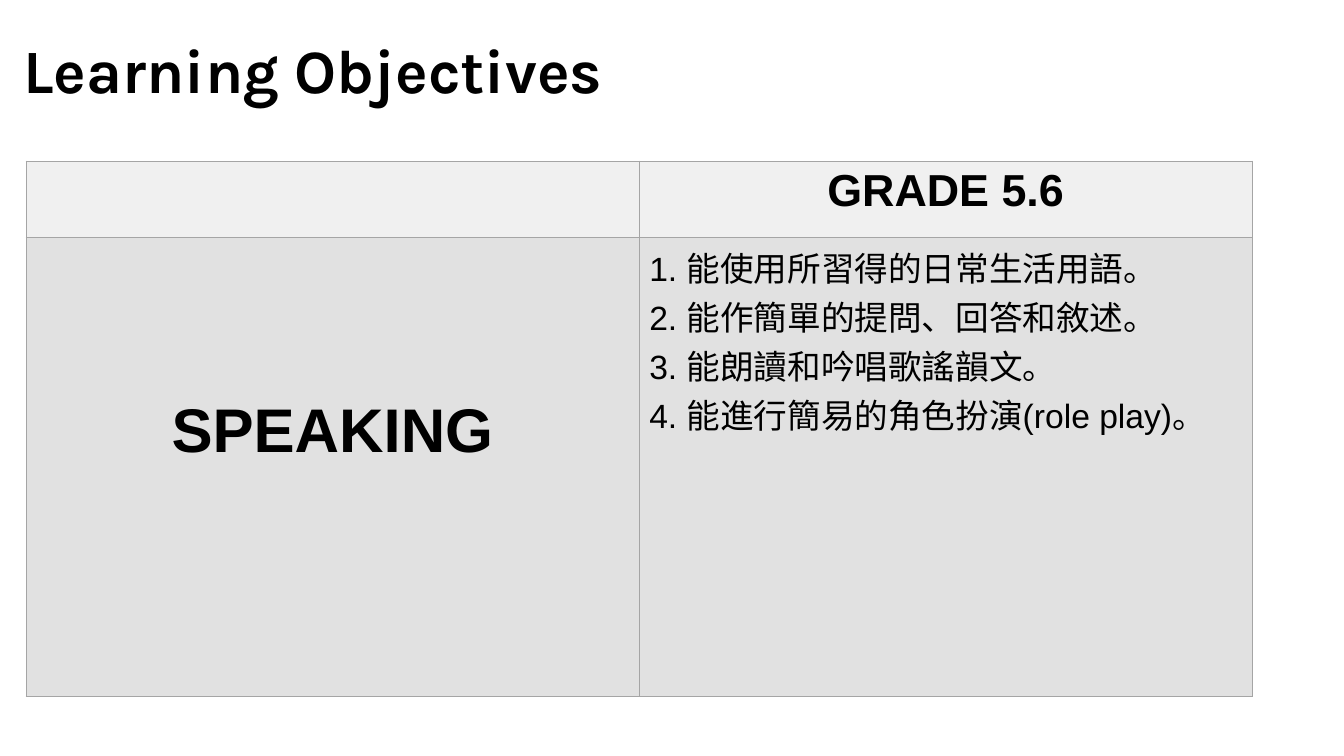
from lxml import etree
from pptx import Presentation
from pptx.dml.color import RGBColor
from pptx.enum.text import MSO_ANCHOR, MSO_AUTO_SIZE, PP_ALIGN
from pptx.oxml.ns import qn
from pptx.util import Inches, Pt

LEFT, CENTER = PP_ALIGN.LEFT, PP_ALIGN.CENTER
MIDDLE, TOP = MSO_ANCHOR.MIDDLE, MSO_ANCHOR.TOP
NO_AUTOFIT = MSO_AUTO_SIZE.NONE

HEADING = "Learning Objectives"
OBJECTIVES = [
    "1. 能使用所習得的日常生活用語。",
    "2. 能作簡單的提問、回答和敘述。",
    "3. 能朗讀和吟唱歌謠韻文。",
    "4. 能進行簡易的角色扮演(role play)。",
]
GRID = [
    [([], "grade"), (["GRADE 5.6"], "grade")],
    [(["SPEAKING"], "skill"), (OBJECTIVES, "objective")],
]

THEME = {
    "ink": RGBColor(0, 0, 0),
    "border": "A5A5A5",
    "row_fills": [RGBColor(0xF0, 0xF0, 0xF0), RGBColor(0xE1, 0xE1, 0xE1)],
    "heading": {"name": "Karla", "size": Pt(44), "bold": True},
    "grade": {"name": "Arial", "size": Pt(32), "bold": True},
    "skill": {"name": "Arial", "size": Pt(44), "bold": True},
    "objective": {"name": "Arial", "size": Pt(24), "bold": False},
}
ALIGNMENT = {"grade": CENTER, "skill": CENTER, "objective": LEFT}
TOP_MARGIN = {"grade": 0.05, "skill": 1.58, "objective": 0.05}
COLUMN_WIDTHS = [6.08, 6.08]
ROW_HEIGHTS = [0.76, 4.55]


def set_format(target, values):
    for attribute, value in values.items():
        setattr(target, attribute, value)


def style_font(font, role):
    set_format(font, THEME[role])
    font.color.rgb = THEME["ink"]


def add_borders(cell):
    properties = cell._tc.get_or_add_tcPr()
    for index, side in enumerate(("a:lnL", "a:lnR", "a:lnT", "a:lnB")):
        edge = etree.Element(qn(side), w=str(Pt(1)))
        fill = etree.SubElement(edge, qn("a:solidFill"))
        etree.SubElement(fill, qn("a:srgbClr"), val=THEME["border"])
        properties.insert(index, edge)


def add_heading(slide):
    heading = slide.shapes.title
    set_format(heading, {"left": Inches(0), "top": Inches(0),
                         "width": Inches(11.5), "height": Inches(1.45)})
    frame = heading.text_frame
    frame.text = HEADING
    set_format(frame, {"vertical_anchor": MIDDLE, "word_wrap": True,
                       "auto_size": NO_AUTOFIT, "margin_left": Inches(0.23)})
    line = frame.paragraphs[0]
    set_format(line, {"alignment": LEFT, "line_spacing": 0.9})
    style_font(line.runs[0].font, "heading")


def fill_cell(cell, lines, role, color):
    set_format(cell, {"vertical_anchor": TOP,
                      "margin_top": Inches(TOP_MARGIN[role])})
    cell.fill.solid()
    cell.fill.fore_color.rgb = color
    add_borders(cell)
    cell.text_frame.text = "\n".join(lines)
    for paragraph in cell.text_frame.paragraphs:
        paragraph.alignment = ALIGNMENT[role]
        style_font(paragraph.font, role)
        for run in paragraph.runs:
            style_font(run.font, role)


def add_objectives(slide):
    table = slide.shapes.add_table(
        len(GRID), len(COLUMN_WIDTHS), Inches(0.26), Inches(1.6),
        Inches(sum(COLUMN_WIDTHS)), Inches(sum(ROW_HEIGHTS))).table
    set_format(table, {"first_row": False, "horz_banding": False})
    for column, width in zip(table.columns, COLUMN_WIDTHS):
        column.width = Inches(width)
    for row, height, entries, color in zip(
            table.rows, ROW_HEIGHTS, GRID, THEME["row_fills"]):
        row.height = Inches(height)
        for cell, (lines, role) in zip(row.cells, entries):
            fill_cell(cell, lines, role, color)


def main():
    deck = Presentation()
    set_format(deck, {"slide_width": Inches(13.33),
                      "slide_height": Inches(7.5)})
    slide = deck.slides.add_slide(deck.slide_layouts[5])
    add_objectives(slide)
    add_heading(slide)
    deck.save("out.pptx")


if __name__ == "__main__":
    main()
